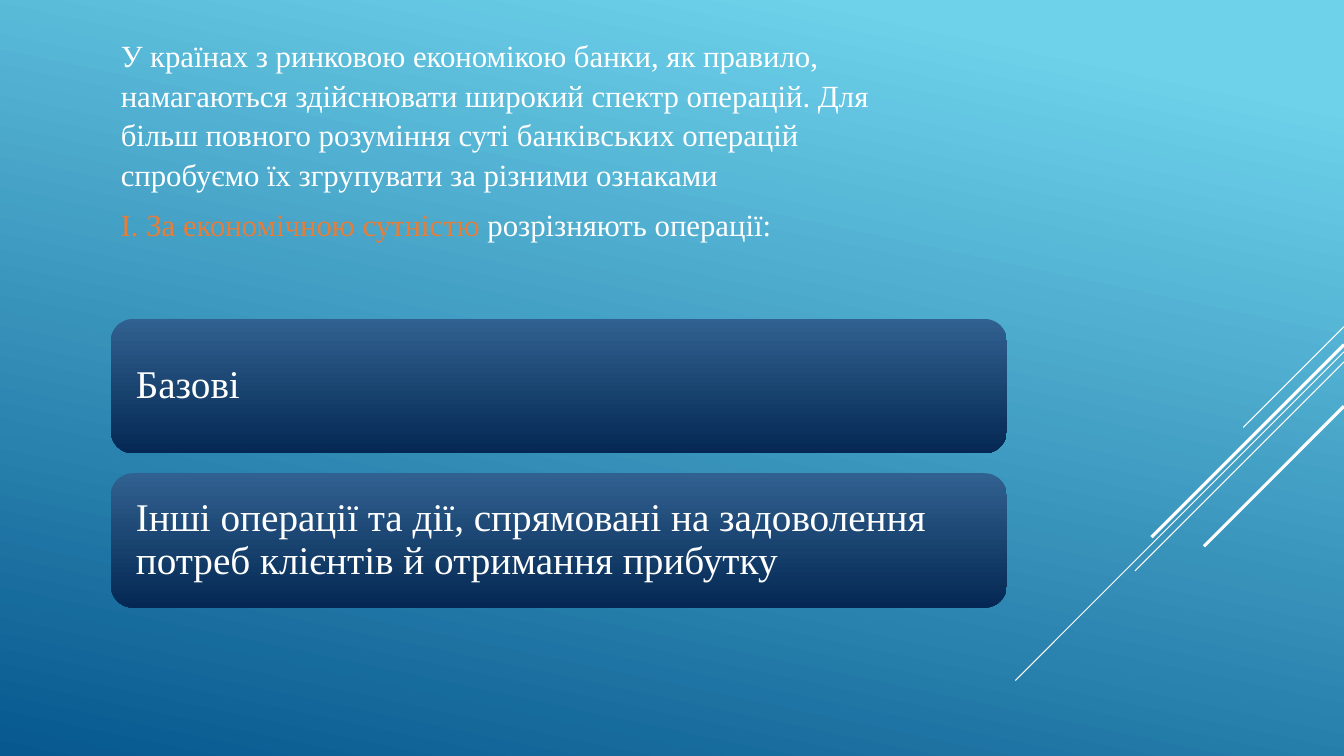
"""Build a slide on grouping bank operations by economic nature."""
from lxml import etree
from pptx import Presentation
from pptx.dml.color import RGBColor
from pptx.enum import shapes, text
from pptx.oxml import ns
from pptx.util import Pt

FONT = "Times New Roman"
WHITE, ORANGE = "FFFFFF", "E87D37"
BACKGROUND = [(0.1, "6ED2EB"), (1, "06588E")]
BOX_FILL = [(0, "316190"), (1, "042853")]
INTRO = [
    [("У країнах з ринковою економікою банки, як правило, намагаються "
      "здійснювати широкий спектр операцій. Для більш повного розуміння суті "
      "банківських операцій спробуємо їх згрупувати за різними ознаками", WHITE)],
    [("І. За економічною сутністю ", ORANGE), ("розрізняють операції:", WHITE)],
]
OPERATIONS = [
    "Базові",
    "Інші операції та дії, спрямовані на задоволення потреб клієнтів "
    "й отримання прибутку",
]
DIAGONALS = [(233.3, 72, 0.75), (251.3, 234.7, 0.75), (258.5, 149.3, 0.75),
             (246.2, 137.5, 2.25), (290.2, 100, 2.25)]
WIDTH, HEIGHT = 960, 540
LEFT, BOX_TOP, BOX_W, BOX_H, BOX_STEP = 79.2, 227.8, 640, 96, 110.2


def color(hex_code):
    return RGBColor.from_string(hex_code)


def set_gradient(fill, stops, angle):
    fill.gradient()
    fill.gradient_angle = 360 - angle
    for stop, (position, hex_code) in zip(fill.gradient_stops, stops):
        stop.position = position
        stop.color.rgb = color(hex_code)


def format_run(r, size, hex_code):
    r.font.name = FONT
    r.font.size = Pt(size)
    r.font.color.rgb = color(hex_code)


def add_diagonal(s, top, span, weight):
    line = s.shapes.add_connector(shapes.MSO_CONNECTOR.STRAIGHT, Pt(WIDTH), Pt(top),
                                  Pt(WIDTH - span), Pt(top + span))
    line.line.color.rgb = color(WHITE)
    line.line.width = Pt(weight)
    etree.SubElement(line._element.spPr, ns.qn("a:effectLst"))


def add_intro(s):
    sp = s.shapes.add_textbox(Pt(LEFT), Pt(20.9), Pt(588.2), Pt(157.7))
    tf = sp.text_frame
    tf.word_wrap = True
    for i, parts in enumerate(INTRO):
        p = tf.add_paragraph() if i else tf.paragraphs[0]
        p.line_spacing = 1.07
        p.space_after = Pt(8)
        for words, hex_code in parts:
            r = p.add_run()
            r.text = words
            format_run(r, 22, hex_code)


def add_operation(s, top, words):
    sp = s.shapes.add_shape(shapes.MSO_SHAPE.ROUNDED_RECTANGLE,
                            Pt(LEFT), Pt(top), Pt(BOX_W), Pt(BOX_H))
    sp.shadow.inherit = False
    sp.line.fill.background()
    set_gradient(sp.fill, BOX_FILL, 90)
    tf = sp.text_frame
    tf.word_wrap = True
    tf.vertical_anchor = text.MSO_ANCHOR.MIDDLE
    tf.margin_left = tf.margin_right = tf.margin_top = tf.margin_bottom = Pt(13.2)
    tf.text = words
    p = tf.paragraphs[0]
    p.alignment = text.PP_ALIGN.LEFT
    p.line_spacing = 0.9
    format_run(p.runs[0], 28, WHITE)


def main():
    prs = Presentation()
    prs.slide_width, prs.slide_height = Pt(WIDTH), Pt(HEIGHT)
    s = prs.slides.add_slide(prs.slide_layouts[6])
    set_gradient(s.background.fill, BACKGROUND, 102)
    for diagonal in DIAGONALS:
        add_diagonal(s, *diagonal)
    add_intro(s)
    for i, words in enumerate(OPERATIONS):
        add_operation(s, BOX_TOP + i * BOX_STEP, words)
    prs.save("out.pptx")


if __name__ == "__main__":
    main()
